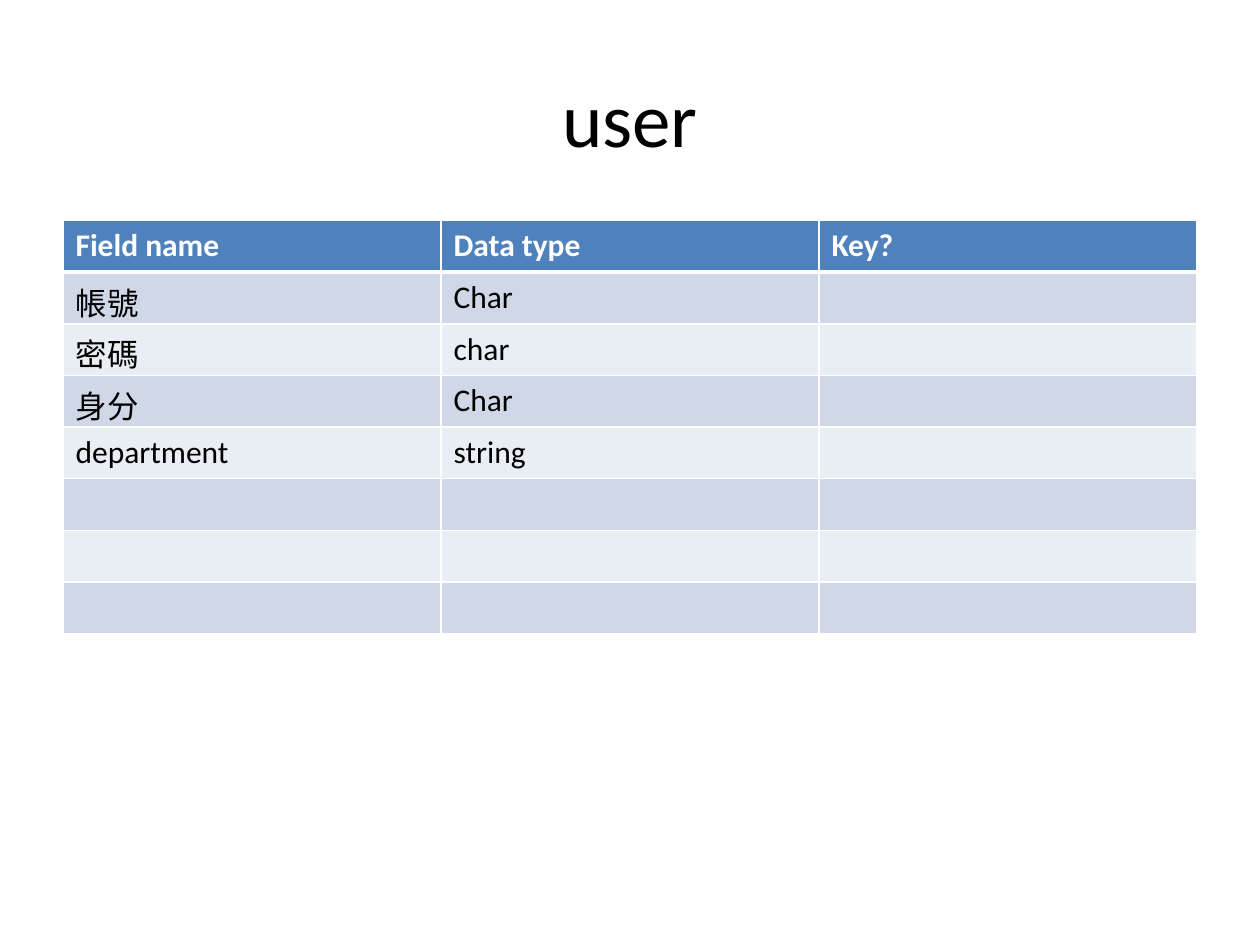
from dataclasses import dataclass

from lxml.etree import SubElement
from pptx import Presentation
from pptx.dml.color import RGBColor
from pptx.enum.text import MSO_ANCHOR, PP_ALIGN
from pptx.oxml.ns import qn
from pptx.util import Inches, Pt


@dataclass(frozen=True)
class Theme:
    font: str = "Calibri"
    title: int = 44
    body: int = 18
    ink: str = "000000"
    paper: str = "FFFFFF"
    head: str = "4F81BD"
    bands: tuple = ("D0D8E8", "E9EDF4")
    rule: int = 1
    thick: int = 3


THEME = Theme()
WIDE, HIGH = Inches(10), Inches(7.5)
MARGIN = WIDE * 0.05
HEADS = ("Field name", "Data type", "Key?")
FIELDS = (
    ("帳號", "Char"),
    ("密碼", "char"),
    ("身分", "Char"),
    ("department", "string"),
)
SPARE = 3  # empty rows at the foot


def style(par, size, color, bold=False):
    font = par.font
    font.name, font.size, font.bold = THEME.font, Pt(size), bold
    font.color.rgb = RGBColor.from_string(color)


def border(cell, foot):
    """Rule all four sides of a cell; foot is the width of the lower one."""
    props = cell._tc.get_or_add_tcPr()
    for side in "LRTB":
        width = foot if side == "B" else THEME.rule
        line = SubElement(props, qn(f"a:ln{side}"), w=str(Pt(width)))
        fill = SubElement(line, qn("a:solidFill"))
        SubElement(fill, qn("a:srgbClr"), val=THEME.paper)


def title(slide, box, text):
    frame = slide.shapes.add_textbox(*box).text_frame
    frame.word_wrap = True
    frame.vertical_anchor = MSO_ANCHOR.MIDDLE
    par = frame.paragraphs[0]
    par.text = text
    par.alignment = PP_ALIGN.CENTER
    style(par, THEME.title, THEME.ink)


def grid(slide, box, rows):
    table = slide.shapes.add_table(len(rows), len(HEADS), *box).table
    for r, row in enumerate(rows):
        top = r == 0
        back = THEME.head if top else THEME.bands[(r - 1) % 2]
        for c in range(len(HEADS)):
            cell = table.cell(r, c)
            if c < len(row):
                cell.text = row[c]
            style(cell.text_frame.paragraphs[0], THEME.body,
                  THEME.paper if top else THEME.ink, top)
            border(cell, THEME.thick if top else THEME.rule)
            cell.fill.solid()
            cell.fill.fore_color.rgb = RGBColor.from_string(back)


def main():
    deck = Presentation()
    deck.slide_width, deck.slide_height = WIDE, HIGH
    slide = deck.slides.add_slide(deck.slide_layouts[6])
    left, span = int(MARGIN), int(WIDE - 2 * MARGIN)

    # Heading
    title(slide, (left, int(HIGH * 0.04), span, int(HIGH / 6)), "user")

    # Field table
    rows = [HEADS, *FIELDS, *[()] * SPARE]
    tall = Inches(0.41) * len(rows)
    grid(slide, (left, Inches(1.75), span, tall), rows)

    deck.save("out.pptx")


if __name__ == "__main__":
    main()
